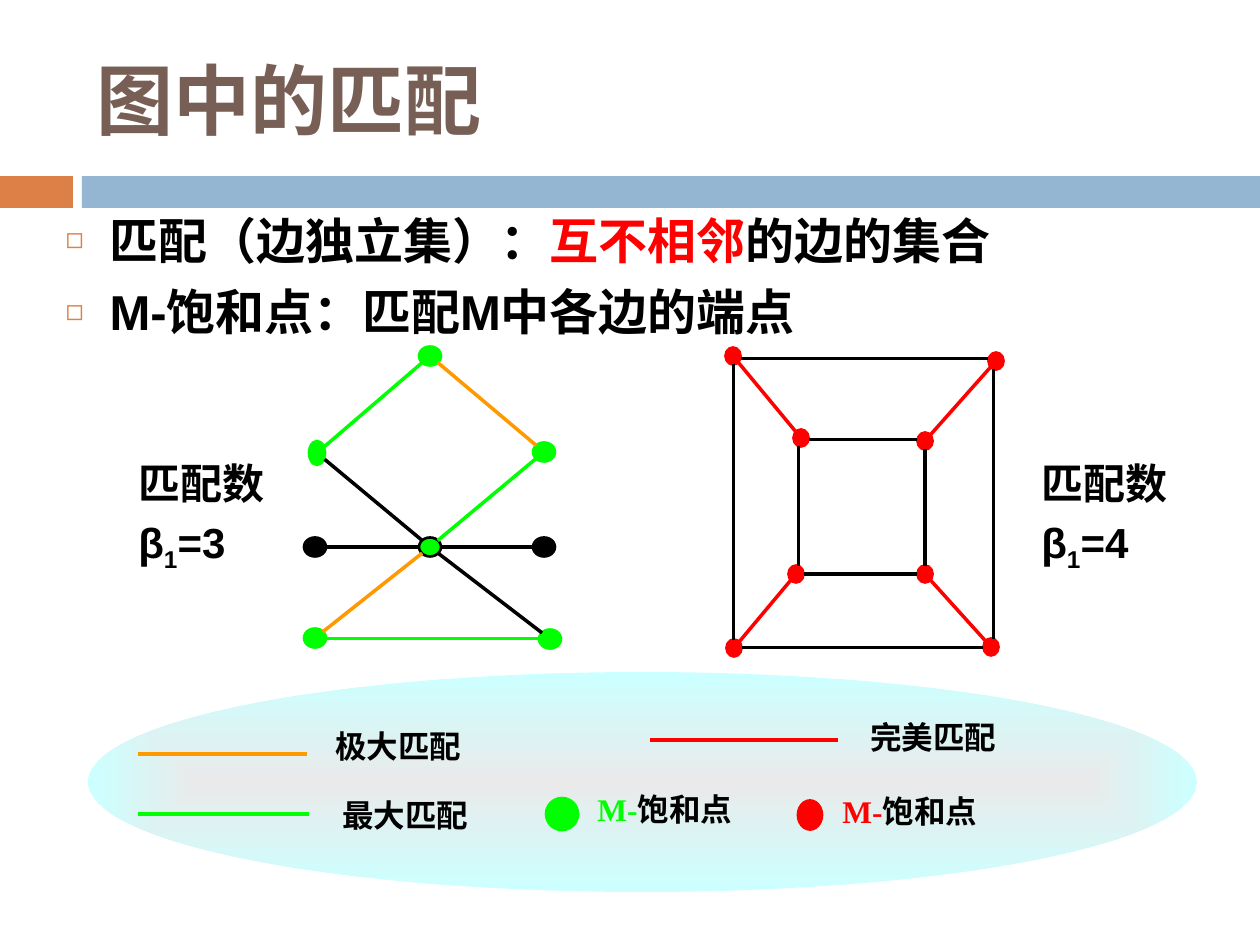
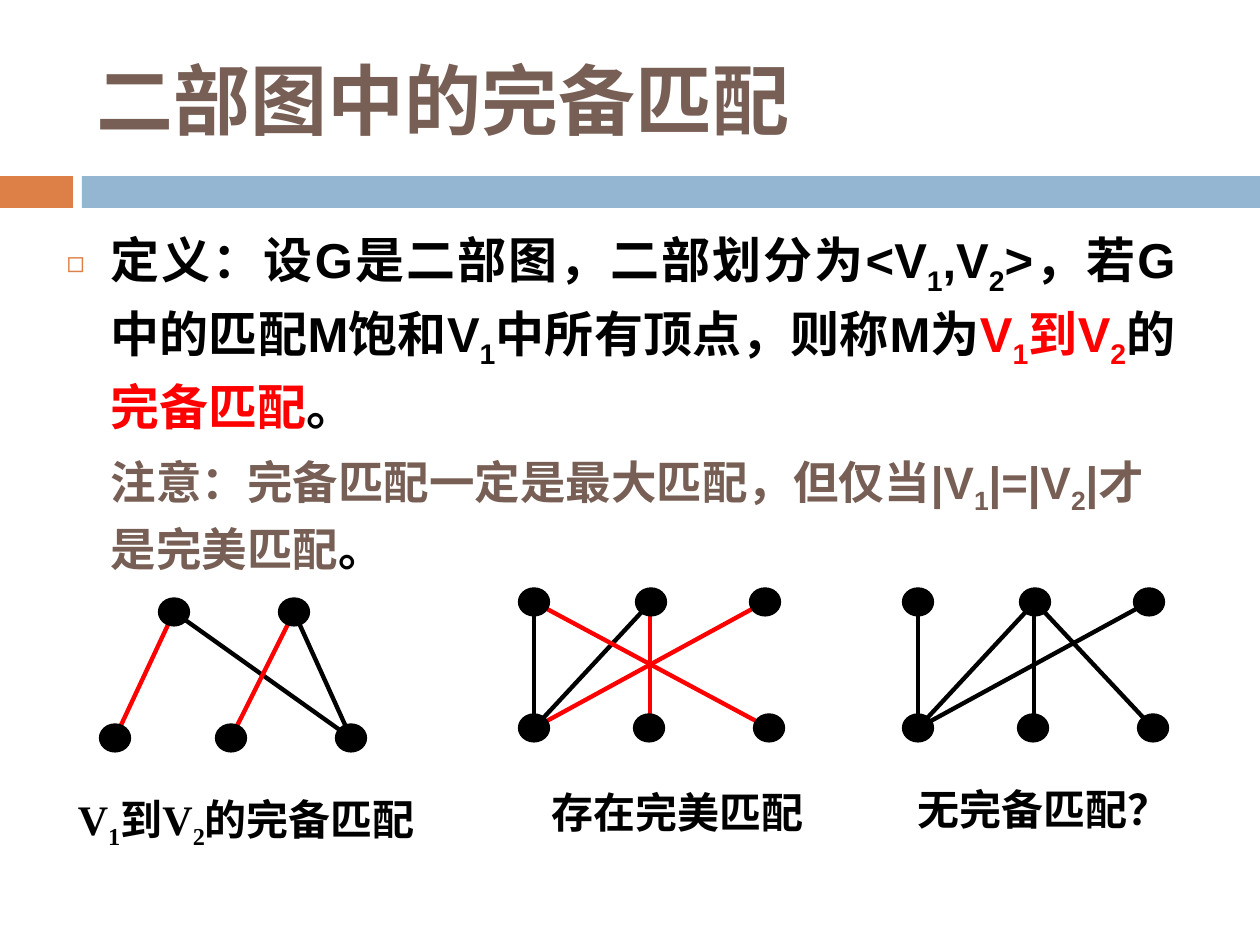
from dataclasses import dataclass
from math import hypot

from lxml.etree import SubElement
from pptx import Presentation
from pptx.dml.color import RGBColor
from pptx.enum.shapes import MSO_CONNECTOR as Connector, MSO_SHAPE as Shape
from pptx.enum.text import MSO_ANCHOR as Anchor, MSO_AUTO_SIZE as AutoSize, PP_ALIGN as Align
from pptx.oxml.ns import qn
from pptx.util import Pt

EMU_PER_PX = 914400 / 126
SNAP = 8


@dataclass(frozen=True)
class Theme:
    title: str = "775F55"
    accent: str = "DD8047"
    band: str = "94B6D2"
    black: str = "000000"
    red: str = "FF0000"
    green: str = "00FF00"
    orange: str = "FF9900"
    legend_inner: str = "EAEAEA"
    legend_outer: str = "CCFFFF"
    sans: str = "Arial"
    serif: str = "Times New Roman"
    title_font: str = "Cabin"
    title_size: int = 44
    body_size: int = 28
    note_size: int = 26
    caption_size: int = 24
    legend_size: int = 18


THEME = Theme()


@dataclass(frozen=True)
class Span:
    text: str
    color: str = THEME.black
    font: str = THEME.sans


@dataclass(frozen=True)
class NodeStyle:
    width: int
    height: int
    line_width: float
    shape: Shape = Shape.OVAL


GREEN_NODE = NodeStyle(22, 19, 1.5)
CUBE_NODE = NodeStyle(16, 18, 1)
BIPARTITE_NODE = NodeStyle(31, 28, 0.75, Shape.FLOWCHART_CONNECTOR)


def px(value):
    return round(value * EMU_PER_PX)


def rgb(color):
    return RGBColor.from_string(color)


def place(shape, left, top, width, height):
    shape.left, shape.top, shape.width, shape.height = map(px, (left, top, width, height))


def add_filled(slide, kind, box, fill, line=None, line_width=1.0):
    shape = slide.shapes.add_shape(kind, *map(px, box))
    shape.shadow.inherit = False
    shape.fill.solid()
    shape.fill.fore_color.rgb = rgb(fill)
    if line:
        shape.line.color.rgb = rgb(line)
        shape.line.width = Pt(line_width)
    else:
        shape.line.fill.background()
    return shape


def add_line(slide, start, end, color, width=2.0):
    line = slide.shapes.add_connector(Connector.STRAIGHT, *map(px, (*start, *end)))
    line.line.color.rgb = rgb(color)
    line.line.width = Pt(width)
    SubElement(line._element.spPr, qn("a:effectLst"))


def add_node(slide, center, style, fill, outline=None):
    x, y = center
    box = (x - style.width / 2, y - style.height / 2, style.width, style.height)
    add_filled(slide, style.shape, box, fill, outline or fill, style.line_width)


def add_edge(slide, start, end, color, gap, width=2.0):
    (x1, y1), (x2, y2) = start, end
    if abs(x1 - x2) < SNAP:
        x1 = x2 = (x1 + x2) / 2
    if abs(y1 - y2) < SNAP:
        y1 = y2 = (y1 + y2) / 2
    length = hypot(x2 - x1, y2 - y1)
    dx, dy = gap * (x2 - x1) / length, gap * (y2 - y1) / length
    add_line(slide, (x1 + dx, y1 + dy), (x2 - dx, y2 - dy), color, width)


def add_edges(slide, nodes, edges, gap, width=2.0):
    for color, pairs in edges.items():
        for start, end in pairs:
            add_edge(slide, nodes[start], nodes[end], color, gap, width)


def add_run(paragraph, text, span, size, subscript):
    run = paragraph.add_run()
    run.text = text
    run.font.name = span.font
    run.font.size = Pt(size)
    run.font.bold = True
    run.font.color.rgb = rgb(span.color)
    if subscript:
        run.font._element.set("baseline", "-25000")


def write(paragraph, spans, size):
    for span in spans:
        plain, *rest = span.text.split("_")
        pieces = [(plain, False)]
        for part in rest:
            pieces += [(part[0], True), (part[1:], False)]
        for text, subscript in pieces:
            if text:
                add_run(paragraph, text, span, size, subscript)


def add_text(slide, box, lines, size, align=Align.LEFT, gap=5):
    text_frame = slide.shapes.add_textbox(*map(px, box)).text_frame
    text_frame.word_wrap = True
    for index, spans in enumerate(lines):
        paragraph = text_frame.add_paragraph() if index else text_frame.paragraphs[0]
        paragraph.alignment = align
        paragraph.space_before = Pt(gap if index else 0)
        write(paragraph, spans, size)


def format_item(paragraph, spans, size, spacing, bullet=True):
    paragraph.alignment = Align.JUSTIFY if bullet else Align.LEFT
    paragraph.space_before = Pt(7)
    paragraph.line_spacing = spacing
    properties = paragraph._p.get_or_add_pPr()
    properties.set("marL", str(px(44)))
    properties.set("indent", str(px(-44 if bullet else 0)))
    if bullet:
        color = SubElement(properties, qn("a:buClr"))
        SubElement(color, qn("a:srgbClr"), val=THEME.accent)
        SubElement(properties, qn("a:buSzPct"), val="60000")
        SubElement(properties, qn("a:buChar"), char="◻")
    else:
        SubElement(properties, qn("a:buNone"))
    write(paragraph, spans, size)


def fill_body(slide, box, items, spacing=1.0):
    body = slide.placeholders[1]
    place(body, *box)
    text_frame = body.text_frame
    text_frame.auto_size = AutoSize.NONE
    text_frame.vertical_anchor = Anchor.TOP
    for index, (spans, size, bullet) in enumerate(items):
        paragraph = text_frame.add_paragraph() if index else text_frame.paragraphs[0]
        format_item(paragraph, spans, size, spacing, bullet)


def new_slide(presentation, title_text):
    slide = presentation.slides.add_slide(presentation.slide_layouts[1])
    add_filled(slide, Shape.RECTANGLE, (0, 176, 73, 32), THEME.accent)
    add_filled(slide, Shape.RECTANGLE, (82, 176, 1178, 32), THEME.band)
    title = slide.shapes.title
    place(title, 84, 31, 1124, 136)
    text_frame = title.text_frame
    text_frame.text = title_text
    text_frame.auto_size = AutoSize.NONE
    text_frame.vertical_anchor = Anchor.MIDDLE
    paragraph = text_frame.paragraphs[0]
    paragraph.alignment = Align.LEFT
    font = paragraph.runs[0].font
    font.name, font.size, font.bold = THEME.title_font, Pt(THEME.title_size), True
    font.color.rgb = rgb(THEME.title)
    return slide


def add_legend_background(slide):
    ellipse = add_filled(slide, Shape.OVAL, (88, 672, 1109, 220), THEME.legend_outer)
    ellipse.fill.gradient()
    for stop, color in zip(ellipse.fill.gradient_stops, (THEME.legend_inner, THEME.legend_outer)):
        stop.color.rgb = rgb(color)
    gradient = ellipse._element.spPr.find(qn("a:gradFill"))
    gradient.remove(gradient.find(qn("a:lin")))
    center = SubElement(gradient, qn("a:path"), {"path": "shape"})
    SubElement(center, qn("a:fillToRect"), {side: "50000" for side in "ltrb"})


def add_legend(slide):
    add_legend_background(slide)
    for label, color, x1, x2, y, text_left, text_top in (
        ("极大匹配", THEME.orange, 138, 307, 754, 323, 721),
        ("最大匹配", THEME.green, 138, 309, 814, 330, 790),
        ("完美匹配", THEME.red, 650, 838, 740, 858, 712),
    ):
        add_line(slide, (x1, y), (x2, y), color)
        add_text(slide, (text_left, text_top, 267, 50), [[Span(label)]], THEME.legend_size)
    for color, center, style, text_left, text_top in (
        (THEME.green, (562, 814), NodeStyle(32, 32, 1.5), 585, 784),
        (THEME.red, (810, 815), NodeStyle(25, 30, 1), 830, 786),
    ):
        add_node(slide, center, style, color)
        label = [Span("M-", color, THEME.serif), Span("饱和点")]
        add_text(slide, (text_left, text_top, 287, 50), [label], THEME.legend_size)


def add_maximum_matching_graph(slide):
    nodes = {
        "apex": (430, 356), "left": (317, 453), "right": (544, 452), "hub": (430, 547),
        "foot_left": (315, 638), "foot_right": (550, 639),
        "west": (315, 547), "east": (544, 547),
    }
    edges = {
        THEME.green: [("apex", "left"), ("hub", "right"), ("foot_left", "foot_right")],
        THEME.orange: [("apex", "right"), ("hub", "foot_left")],
        THEME.black: [("left", "hub"), ("hub", "foot_right"), ("west", "hub"), ("hub", "east")],
    }
    for name, center in nodes.items():
        style = NodeStyle(16, 24, 1.5) if name == "left" else GREEN_NODE
        fill = THEME.black if name in ("west", "east") else THEME.green
        outline = THEME.black if name == "hub" else fill
        add_node(slide, center, style, fill, outline)
    add_edges(slide, nodes, edges, 10)


def add_perfect_matching_graph(slide):
    outer = [(733, 356), (996, 361), (991, 647), (734, 648)]
    inner = [(801, 438), (925, 441), (925, 574), (796, 574)]
    for center in outer + inner:
        add_node(slide, center, CUBE_NODE, THEME.red)
    for index in range(4):
        for ring in (outer, inner):
            add_edge(slide, ring[index], ring[(index + 1) % 4], THEME.black, 8)
        add_edge(slide, outer[index], inner[index], THEME.red, 8)


def add_bipartite_graph(slide, tops, bottoms, y, edges):
    nodes = {f"t{i}": (x, y) for i, x in enumerate(tops)}
    nodes |= {f"b{i}": (x, y + 126) for i, x in enumerate(bottoms)}
    add_edges(slide, nodes, edges, 11, 2.5)
    for center in nodes.values():
        add_node(slide, center, BIPARTITE_NODE, THEME.black)


def build_matching_slide(presentation):
    slide = new_slide(presentation, "图中的匹配")
    add_legend(slide)
    definition = [Span("匹配（边独立集）："), Span("互不相邻", THEME.red), Span("的边的集合")]
    saturated = [Span("M-饱和点：匹配M中各边的端点")]
    items = [(spans, THEME.body_size, True) for spans in (definition, saturated)]
    fill_body(slide, (53, 204, 1144, 147), items)
    add_maximum_matching_graph(slide)
    add_perfect_matching_graph(slide)
    for left, number in ((126, 3), (1029, 4)):
        lines = [[Span("匹配数")], [Span(f"β_1={number}")]]
        add_text(slide, (left, 451, 179, 125), lines, THEME.caption_size)


def build_bipartite_slide(presentation):
    slide = new_slide(presentation, "二部图中的完备匹配")
    definition = [
        Span("定义：设G是二部图，二部划分为<V_1,V_2>，若G中的匹配M饱和V_1中所有顶点，则称M为"),
        Span("V_1到V_2", THEME.red), Span("的"), Span("完备匹配", THEME.red), Span("。"),
    ]
    note = [Span("注意：完备匹配一定是最大匹配，但仅当|V_1|=|V_2|才是完美匹配", THEME.title), Span("。")]
    items = [(definition, THEME.body_size, True), (note, THEME.note_size, False)]
    fill_body(slide, (54, 217, 1134, 357), items, 1.1)

    add_bipartite_graph(slide, (174, 294), (115, 231, 351), 612, {
        THEME.black: [("t0", "b2"), ("t1", "b2")],
        THEME.red: [("t0", "b0"), ("t1", "b1")],
    })
    tops, bottoms = (534, 651, 765), (534, 649, 769)
    add_bipartite_graph(slide, tops, bottoms, 602, {
        THEME.black: [("t0", "b0"), ("t1", "b0")],
        THEME.red: [("t0", "b2"), ("t1", "b1"), ("t2", "b0")],
    })
    add_bipartite_graph(slide, [x + 384 for x in tops], [x + 384 for x in bottoms], 602, {
        THEME.black: [("t0", "b0"), ("t1", "b0"), ("t1", "b1"), ("t1", "b2"), ("t2", "b0")],
    })
    for caption, left, top, width in (
        ("V_1到V_2的完备匹配", 31, 787, 431),
        ("存在完美匹配", 494, 780, 368),
        ("无完备匹配？", 860, 777, 368),
    ):
        lines = [[Span(caption, font=THEME.serif)]]
        add_text(slide, (left, top, width, 73), lines, THEME.caption_size, Align.CENTER)


def main():
    presentation = Presentation()
    presentation.slide_width, presentation.slide_height = px(1260), px(945)
    build_matching_slide(presentation)
    build_bipartite_slide(presentation)
    presentation.save("out.pptx")


if __name__ == "__main__":
    main()
